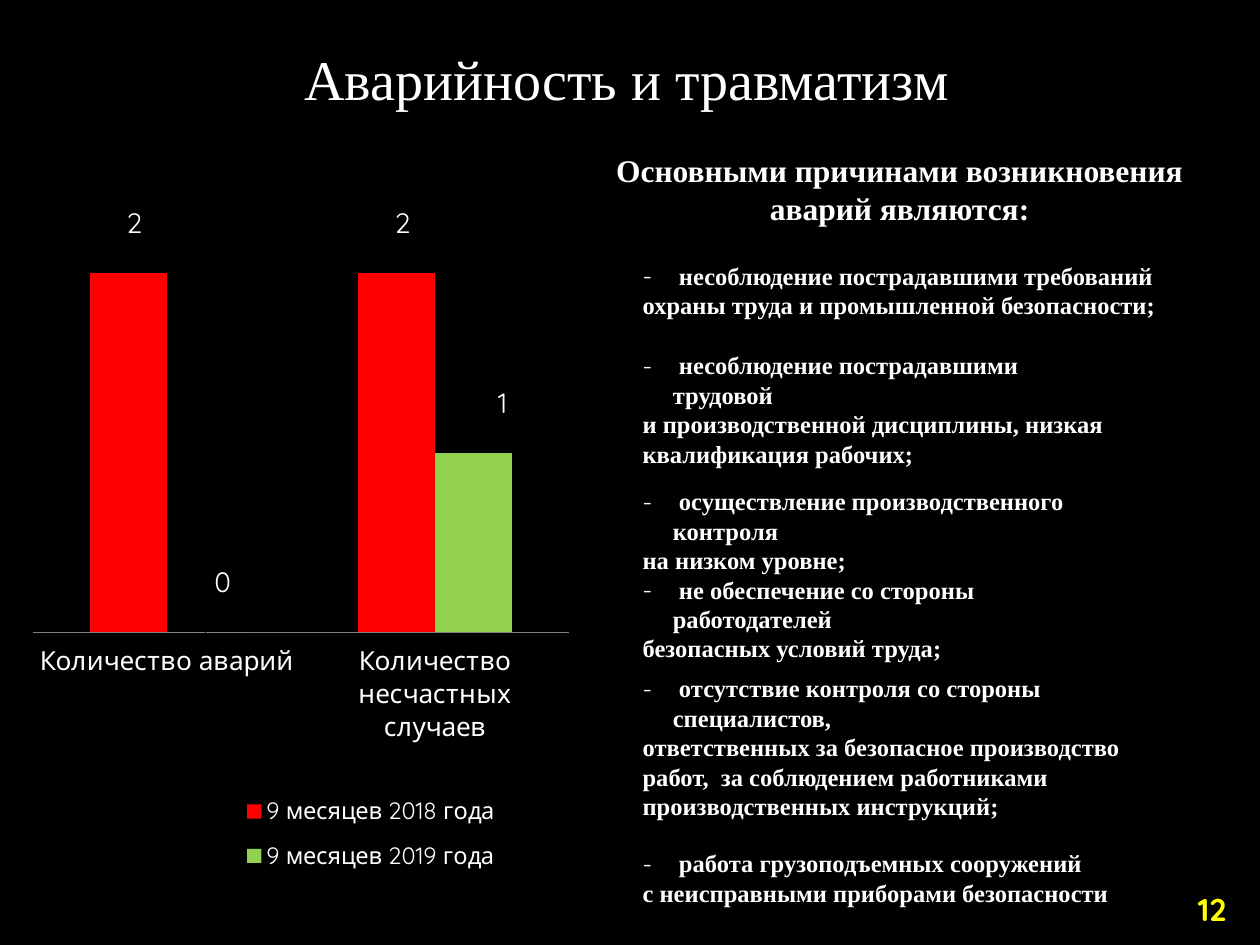
from dataclasses import dataclass
from lxml.etree import SubElement
from pptx import Presentation
from pptx.chart.data import CategoryChartData
from pptx.dml.color import RGBColor
from pptx.enum.chart import XL_CHART_TYPE as ChartType, XL_LABEL_POSITION as LabelPosition
from pptx.enum.chart import XL_LEGEND_POSITION as LegendPosition, XL_TICK_MARK as TickMark
from pptx.enum.chart import XL_TICK_LABEL_POSITION as TickLabels
from pptx.enum.shapes import MSO_SHAPE as Preset
from pptx.enum.text import MSO_ANCHOR as Anchor, MSO_AUTO_SIZE as AutoSize, PP_ALIGN as Align
from pptx.oxml.ns import qn
from pptx.util import Inches, Pt


@dataclass(frozen=True)
class Theme:
    serif: str = "Times New Roman"
    sans: str = "Quicksand"
    background: RGBColor = RGBColor(0, 0, 0)
    text: RGBColor = RGBColor(255, 255, 255)
    number: RGBColor = RGBColor(255, 255, 0)
    axis: RGBColor = RGBColor(128, 128, 128)
    previous: RGBColor = RGBColor(255, 0, 0)
    current: RGBColor = RGBColor(146, 208, 80)
    title_size: float = 32
    heading_size: float = 18
    label_size: float = 16
    axis_size: float = 15
    list_size: float = 14
    legend_size: float = 13.5


THEME = Theme()
CATEGORIES = ["Количество аварий", "Количество несчастных случаев"]
SERIES = [
    ("9 месяцев 2018 года", (2, 2), THEME.previous, [(0.01, -0.03), (0.01, -0.03)]),
    ("9 месяцев 2019 года", (0, 1), THEME.current, [(0.03, -0.03), (0.05, -0.03)]),
]
CAUSES = [
    (0, [" несоблюдение пострадавшими требований"],
     ["охраны труда и промышленной безопасности;"]),
    (17.5, [" несоблюдение пострадавшими", "трудовой"],
     ["и производственной дисциплины, низкая", "квалификация рабочих;"]),
    (10.5, [" осуществление производственного", "контроля"], ["на низком уровне;"]),
    (0, [" не обеспечение со стороны", "работодателей"], ["безопасных условий труда;"]),
    (6, [" отсутствие контроля со стороны", "специалистов,"],
     ["ответственных за безопасное производство", "работ,  за соблюдением работниками",
      "производственных инструкций;"]),
    (16, [" работа грузоподъемных сооружений"], ["с неисправными приборами безопасности"]),
]


def place(box, left, top, width, height):
    box.left, box.top = Inches(left), Inches(top)
    box.width, box.height = Inches(width), Inches(height)


def set_font(font, size, color=THEME.text, name=THEME.sans, bold=False):
    font.size, font.name, font.bold = Pt(size), name, bold
    font.color.rgb = color


def add_span(para, text, size, color=THEME.text, name=THEME.serif, bold=True):
    span = para.add_run()
    span.text = text
    set_font(span.font, size, color, name, bold)


def prepare_frame(box, anchor):
    frame = box.text_frame
    frame.word_wrap = True
    frame.auto_size = AutoSize.NONE
    frame.vertical_anchor = anchor
    return frame


def set_bullet(para, character=None):
    properties = para._p.get_or_add_pPr()
    hanging = Inches(0.24) if character else 0
    properties.set("marL", str(hanging))
    properties.set("indent", str(-hanging))
    if character:
        SubElement(properties, qn("a:buFont"), typeface=THEME.sans)
        SubElement(properties, qn("a:buChar"), char=character)
    else:
        SubElement(properties, qn("a:buNone"))


def add_title(page):
    title = page.shapes.title
    place(title, -0.04, 0.3, 10.03, 0.64)
    para = prepare_frame(title, Anchor.MIDDLE).paragraphs[0]
    para.alignment = Align.CENTER
    add_span(para, "Аварийность и травматизм", THEME.title_size, bold=False)


def add_heading(page):
    box = page.shapes.add_textbox(Inches(4.54), Inches(1.15), Inches(5.2), Inches(0.7))
    para = prepare_frame(box, Anchor.TOP).paragraphs[0]
    para.alignment = Align.CENTER
    add_span(para, "Основными причинами возникновения аварий являются:", THEME.heading_size)


def add_causes(page):
    box = page.placeholders[1]
    place(box, 5, 2.02, 4.6, 5.22)
    frame = prepare_frame(box, Anchor.TOP)
    para = frame.paragraphs[0]
    for gap, opening, details in CAUSES:
        for index, lines in enumerate([opening] + [[line] for line in details]):
            if para is None:
                para = frame.add_paragraph()
            set_bullet(para, None if index else "-")
            para.space_before = Pt(0 if index else gap)
            para.alignment = Align.LEFT
            for position, line in enumerate(lines):
                if position:
                    para.add_line_break()
                add_span(para, line, THEME.list_size)
            para = None


def set_layout(parent, position, **values):
    for old in parent.findall(qn("c:layout")):
        parent.remove(old)
    layout = parent.makeelement(qn("c:layout"), {})
    parent.insert(position, layout)
    manual = SubElement(layout, qn("c:manualLayout"))
    for tag, value in values.items():
        SubElement(manual, qn(f"c:{tag}"), val=str(value))


def format_series(series, color, offsets):
    series.format.fill.solid()
    series.format.fill.fore_color.rgb = color
    labels = series.data_labels
    labels.show_value = True
    labels.position = LabelPosition.OUTSIDE_END
    set_font(labels.font, THEME.label_size)
    for index in range(len(offsets)):
        label = series.points[index].data_label
        set_font(label.font, THEME.label_size)
        label.position = LabelPosition.OUTSIDE_END
    for element, (x, y) in zip(series._element.iter(qn("c:dLbl")), offsets):
        set_layout(element, 1, x=x, y=y)


def format_axes(chart):
    values, categories = chart.value_axis, chart.category_axis
    values.minimum_scale, values.maximum_scale = 0, 2.5
    values.has_major_gridlines = False
    values.visible = False
    categories.major_tick_mark = TickMark.NONE
    categories.tick_label_position = TickLabels.LOW
    categories.format.line.color.rgb = THEME.axis
    set_font(categories.tick_labels.font, THEME.axis_size)


def add_accident_chart(page):
    data = CategoryChartData()
    data.categories = CATEGORIES
    for name, values, _, _ in SERIES:
        data.add_series(name, values)
    chart = page.shapes.add_chart(ChartType.COLUMN_CLUSTERED, Inches(0.12), Inches(0.19),
                                  Inches(4.63), Inches(7.43), data).chart
    set_font(chart.font, THEME.legend_size)
    chart.has_title = False
    plot = chart.plots[0]
    plot.gap_width, plot.overlap, plot.vary_by_categories = 150, 0, False
    for series, (_, _, color, offsets) in zip(plot.series, SERIES):
        format_series(series, color, offsets)
    format_axes(chart)
    chart.has_legend = True
    chart.legend.position = LegendPosition.BOTTOM
    chart.legend.include_in_layout = False
    set_font(chart.legend.font, THEME.legend_size)
    set_layout(chart.legend._element, 1, xMode="edge", yMode="edge",
               x=0.38, y=0.81, w=0.46, h=0.11)
    area = chart._chartSpace.find(f".//{qn('c:plotArea')}")
    set_layout(area, 0, layoutTarget="inner", xMode="edge", yMode="edge",
               x=0.03, y=0.17, w=0.92, h=0.48)


def add_page_number(page):
    badge = page.shapes.add_shape(Preset.OVAL, Inches(9.24), Inches(6.94),
                                  Inches(0.76), Inches(0.55))
    badge.shadow.inherit = False
    badge.fill.background()
    badge.line.fill.background()
    para = prepare_frame(badge, Anchor.MIDDLE).paragraphs[0]
    para.alignment = Align.CENTER
    add_span(para, "12", THEME.heading_size, THEME.number, THEME.sans)


def main():
    deck = Presentation()
    deck.slide_width, deck.slide_height = Inches(10), Inches(7.5)
    page = deck.slides.add_slide(deck.slide_layouts[1])
    page.background.fill.solid()
    page.background.fill.fore_color.rgb = THEME.background
    add_title(page)
    add_accident_chart(page)
    add_heading(page)
    add_causes(page)
    add_page_number(page)
    deck.save("out.pptx")


if __name__ == "__main__":
    main()
